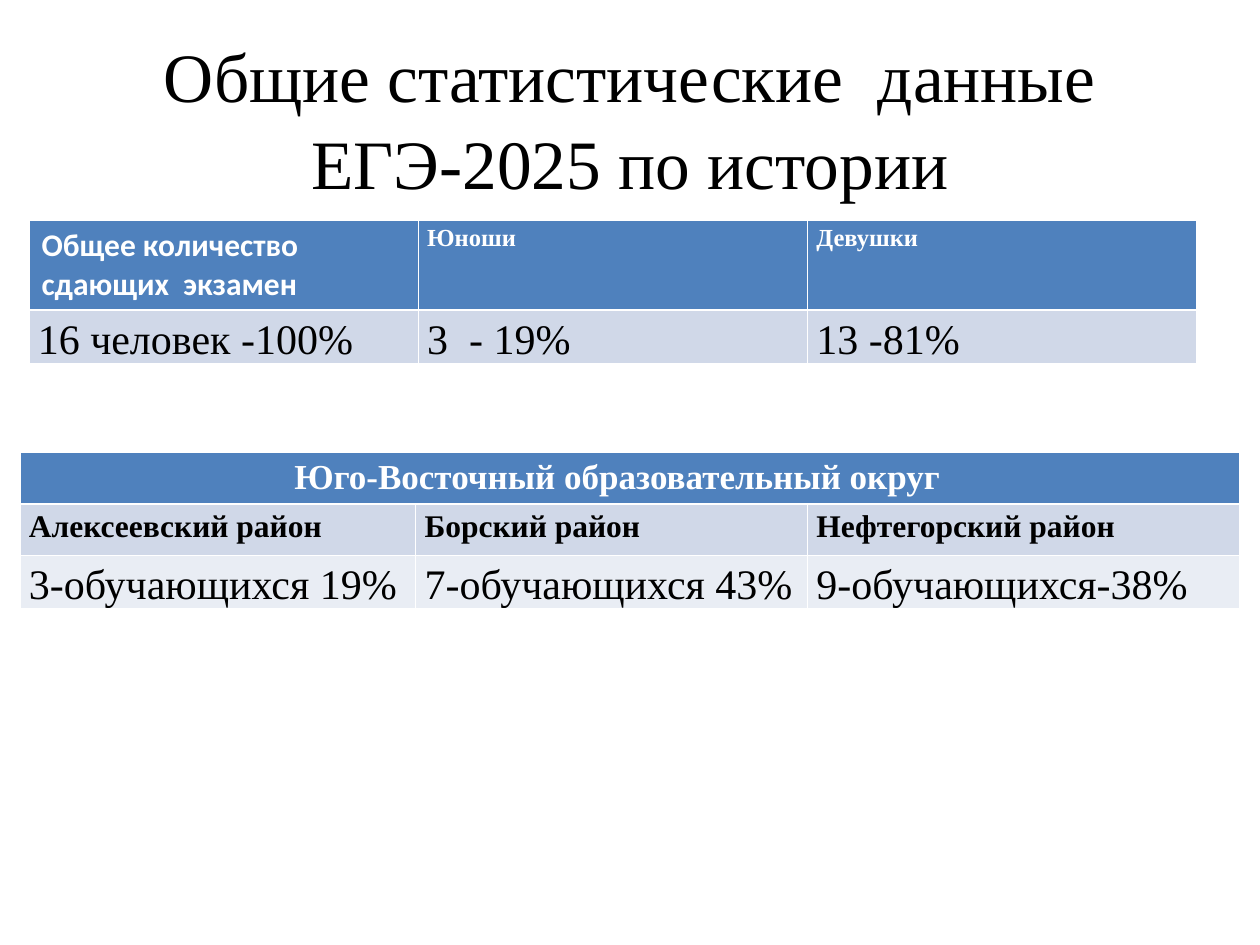
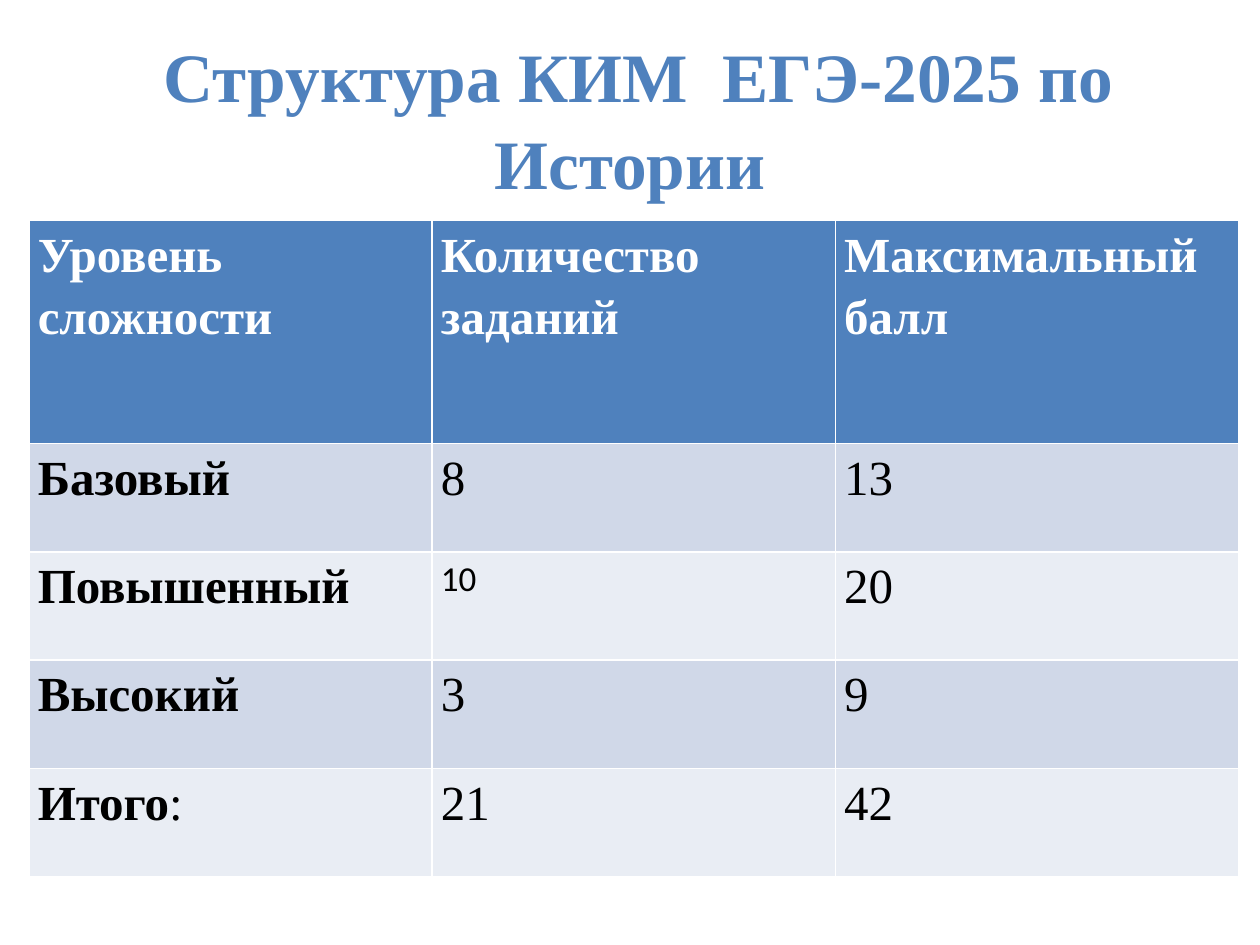
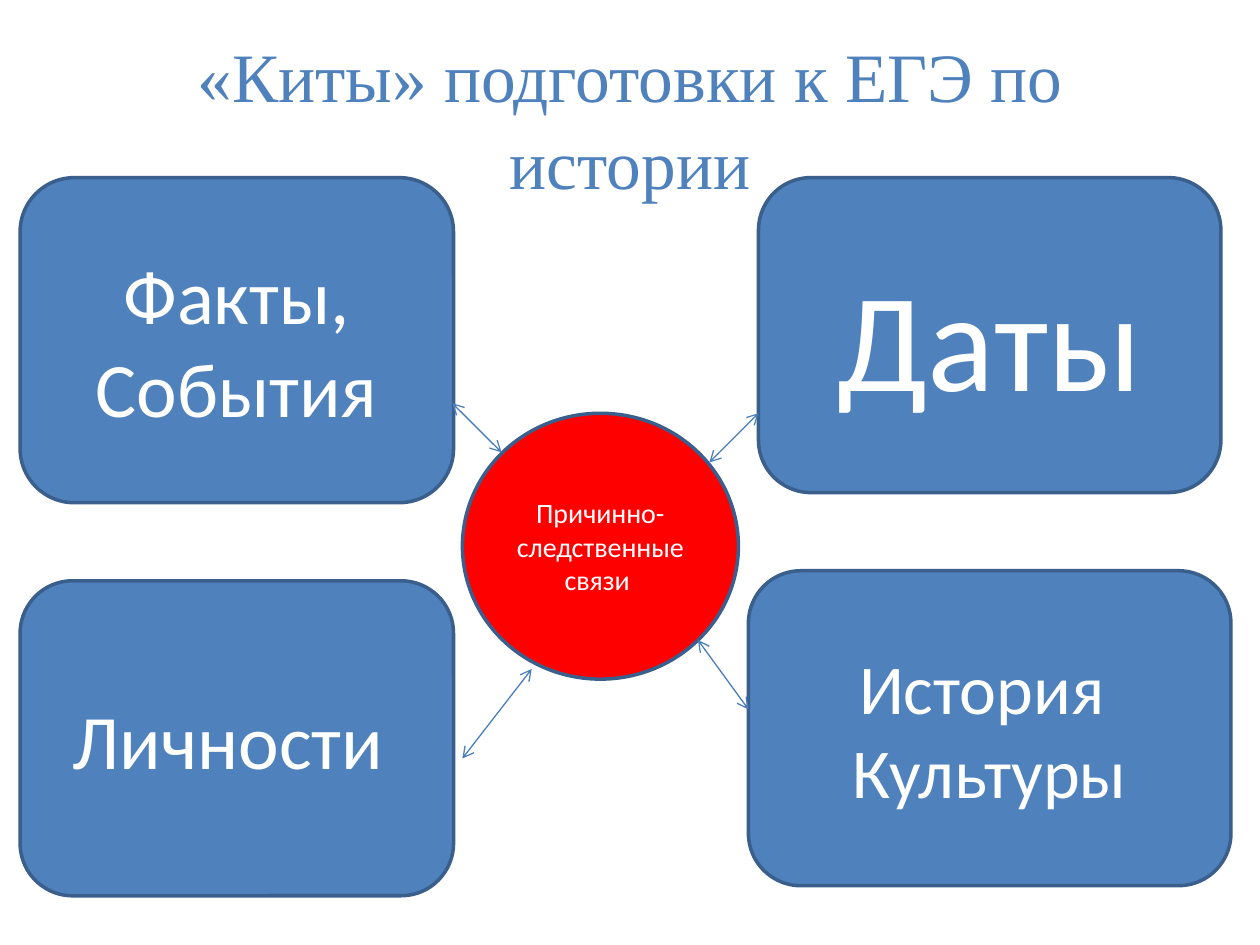
import pptx
import pptx.dml.color
import pptx.enum.shapes
import pptx.enum.text
import pptx.oxml
import pptx.oxml.ns
import pptx.util
from pptx.util import Inches

BLUE, OUTLINE, ARROW, RED = "4F81BD", "3A5F8C", "4B7EBC", "FF0000"
WHITE, BLACK = "FFFFFF", "000000"
BANDS = ("D0D8E8", "E9EDF4")
SERIF, SANS = "Times New Roman", "Calibri"
ALIGN = pptx.enum.text.PP_ALIGN
SHAPE = pptx.enum.shapes.MSO_SHAPE

# Table rows: height, text size, bold, cell texts
GENDER_ROWS = [
    (0.7, 14, True, ["Общее количество  сдающих  экзамен", "Юноши", "Девушки"]),
    (0.42, 24, False, ["16 человек -100%", "3  - 19%", "13 -81%"]),
]
DISTRICT_ROWS = [
    (0.4, 20, True, ["Юго-Восточный образовательный округ", "", ""]),
    (0.41, 18, True, ["Алексеевский район", "Борский район", "Нефтегорский район"]),
    (0.42, 24, False, ["3-обучающихся 19%", "7-обучающихся 43%", "9-обучающихся-38%"]),
]
LEVEL_ROWS = [
    (1.77, 28, True, ["Уровень сложности", "Количество  заданий", "Максимальный балл "]),
    (0.86, 28, False, ["Базовый", "8", "13"]),
    (0.86, 28, False, ["Повышенный", "10", "20"]),
    (0.86, 28, False, ["Высокий", "3", "9"]),
    (0.86, 28, False, ["Итого", "21", "42"]),
]

# Left, top, width, height, text size, paragraphs
PILLARS = [
    (0.16, 1.41, 3.44, 2.58, 44, ["Факты,", "События"]),
    (6.02, 1.41, 3.67, 2.5, 80, ["Даты"]),
    (0.16, 4.61, 3.44, 2.5, 44, ["Личности "]),
    (5.94, 4.53, 3.83, 2.5, 40, ["История  Культуры"]),
]
CORE = (3.67, 3.28, 2.19, 2.11, 16, ["Причинно-следственные связи "])
LINKS = [
    (4.22, 5.31, 3.67, 6.02),
    (5.63, 3.67, 6.02, 3.28),
    (5.54, 5.08, 5.94, 5.63),
    (3.59, 3.2, 3.98, 3.59),
]


def rgb(code):
    return pptx.dml.color.RGBColor.from_string(code)


def set_font(font, face, size, color, bold=False):
    font.name, font.size, font.bold = face, pptx.util.Pt(size), bold
    font.color.rgb = rgb(color)


def set_margins(cell, left, top, right, bottom):
    cell.margin_left, cell.margin_top = Inches(left), Inches(top)
    cell.margin_right, cell.margin_bottom = Inches(right), Inches(bottom)


def add_slide(prs, heading, color, bold=False):
    slide = prs.slides.add_slide(prs.slide_layouts[5])
    title = slide.shapes.title
    title.left, title.top = Inches(0.5), Inches(0.3)
    title.width, title.height = Inches(9), Inches(1.25)
    title.text_frame.text = heading
    title.text_frame.vertical_anchor = pptx.enum.text.MSO_ANCHOR.MIDDLE
    line = title.text_frame.paragraphs[0]
    line.alignment, line.line_spacing = ALIGN.CENTER, 1.04
    set_font(line.font, SERIF, 39.6, color, bold)
    return slide


def add_grid(slide, left, top, widths, rows, align=ALIGN.LEFT):
    """Add a table with a blue header row and banded body; its style draws the borders."""
    height = sum(row[0] for row in rows)
    grid = slide.shapes.add_table(len(rows), len(widths), Inches(left), Inches(top),
                                  Inches(sum(widths)), Inches(height)).table
    for column, width in zip(grid.columns, widths):
        column.width = Inches(width)
    for r, (row_height, size, bold, texts) in enumerate(rows):
        grid.rows[r].height = Inches(row_height)
        for c, text in enumerate(texts):
            cell = grid.cell(r, c)
            cell.fill.solid()
            cell.fill.fore_color.rgb = rgb(BANDS[(r - 1) % 2] if r else BLUE)
            set_margins(cell, 0.07, 0, 0.07, 0)
            cell.text = text
            line = cell.text_frame.paragraphs[0]
            line.alignment, line.line_spacing = align, 1.15
            set_font(line.font, SERIF, size, BLACK if r else WHITE, bold)
    return grid


def add_bubble(slide, preset, fill, left, top, width, height, size, lines):
    bubble = slide.shapes.add_shape(preset, Inches(left), Inches(top),
                                    Inches(width), Inches(height))
    bubble.shadow.inherit = False
    bubble.fill.solid()
    bubble.fill.fore_color.rgb = rgb(fill)
    bubble.line.color.rgb = rgb(OUTLINE)
    bubble.line.width = pptx.util.Pt(2)
    bubble.text_frame.text = "\n".join(lines)
    bubble.text_frame.word_wrap = True
    for line in bubble.text_frame.paragraphs:
        line.alignment = ALIGN.CENTER
        set_font(line.font, SANS, size, WHITE)


def add_double_arrow(slide, ends):
    link = slide.shapes.add_connector(pptx.enum.shapes.MSO_CONNECTOR.STRAIGHT,
                                      *(Inches(end) for end in ends))
    link.line.color.rgb = rgb(ARROW)
    link.line.width = pptx.util.Pt(0.75)
    stroke = link.line._get_or_add_ln()
    for tag in ("a:headEnd", "a:tailEnd"):
        tip = pptx.oxml.parse_xml(f'<{tag} {pptx.oxml.ns.nsdecls("a")} type="arrow"/>')
        stroke.append(tip)
    effects = pptx.oxml.parse_xml(f'<a:effectLst {pptx.oxml.ns.nsdecls("a")}/>')
    stroke.addnext(effects)


def build_statistics(prs):
    slide = add_slide(prs, "Общие статистические  данные\vЕГЭ-2025 по истории", BLACK)
    gender = add_grid(slide, 0.23, 1.75, [3.09] * 3, GENDER_ROWS)
    total = gender.cell(0, 0)
    set_margins(total, 0.1, 0.05, 0.1, 0.05)
    line = total.text_frame.paragraphs[0]
    line.line_spacing = 1
    set_font(line.font, SANS, 18, WHITE, True)

    districts = add_grid(slide, 0.16, 3.59, [3.14, 3.11, 3.43], DISTRICT_ROWS)
    region = districts.cell(0, 0)
    region.merge(districts.cell(0, 2))
    set_margins(region, 0.1, 0.05, 0.3, 0.05)
    line = region.text_frame.paragraphs[0]
    line.alignment, line.line_spacing = ALIGN.CENTER, 1


def build_structure(prs):
    slide = add_slide(prs, " Структура КИМ  ЕГЭ-2025 по Истории", BLUE, True)
    levels = add_grid(slide, 0.23, 1.75, [3.2] * 3, LEVEL_ROWS, ALIGN.JUSTIFY)
    for r in range(1, len(LEVEL_ROWS)):
        levels.cell(r, 0).text_frame.paragraphs[0].font.bold = True
    advanced_count = levels.cell(2, 1).text_frame.paragraphs[0]
    set_font(advanced_count.font, SANS, 20, BLACK)
    summary = levels.cell(4, 0).text_frame.paragraphs[0]
    summary.runs[0].font.bold = True
    colon = summary.add_run()
    colon.text = ":"
    set_font(colon.font, SERIF, 28, BLACK)


def build_pillars(prs):
    slide = add_slide(prs, "«Киты» подготовки к ЕГЭ по истории", BLUE)
    for pillar in PILLARS:
        add_bubble(slide, SHAPE.ROUNDED_RECTANGLE, BLUE, *pillar)
    add_bubble(slide, SHAPE.OVAL, RED, *CORE)
    for ends in LINKS:
        add_double_arrow(slide, ends)


def main():
    prs = pptx.Presentation()
    prs.slide_width, prs.slide_height = Inches(10), Inches(7.5)
    build_statistics(prs)
    build_structure(prs)
    build_pillars(prs)
    prs.save("out.pptx")


if __name__ == "__main__":
    main()
